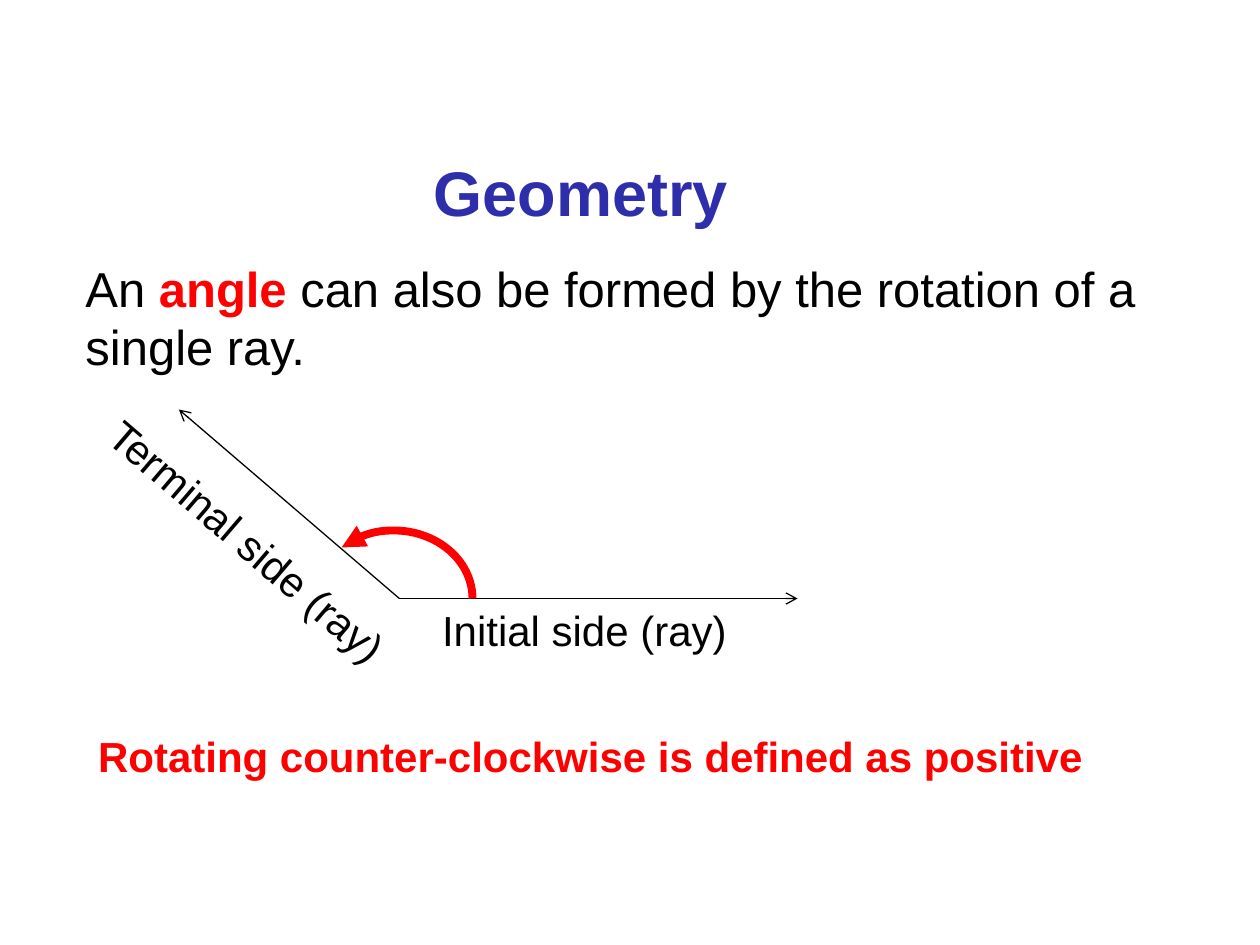
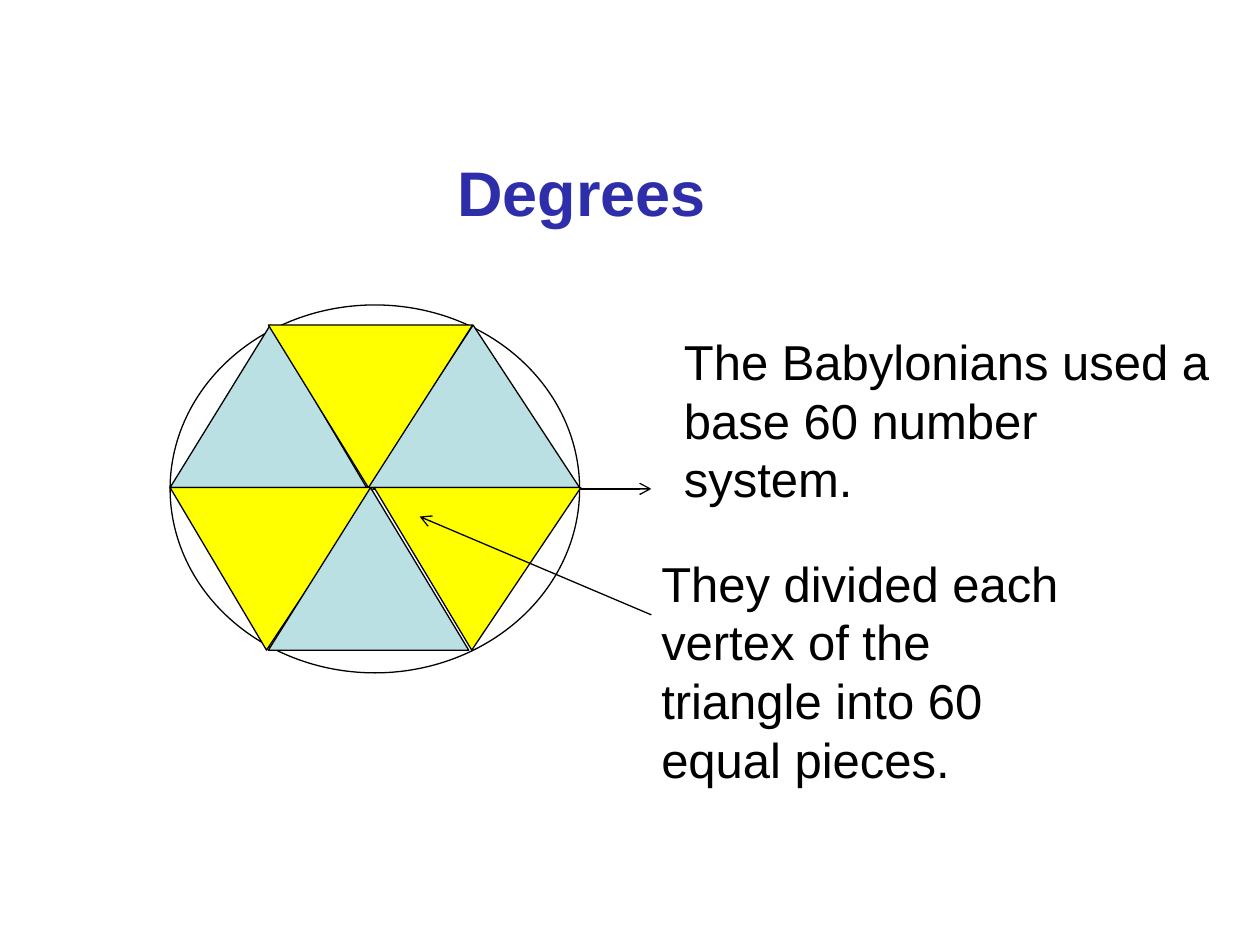
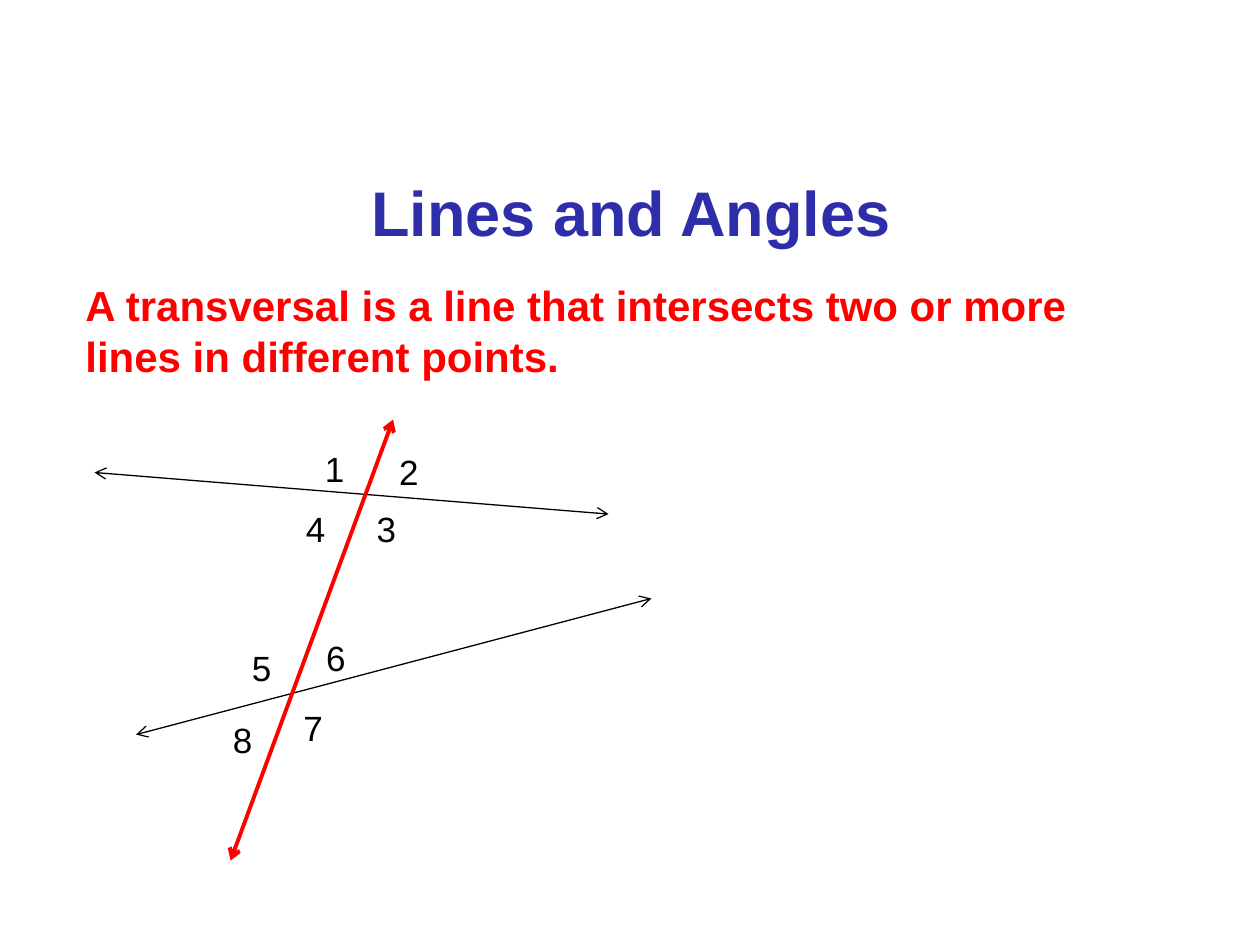
import pptx
import pptx.dml.color
import pptx.enum.shapes
import pptx.enum.text
import pptx.oxml
import pptx.oxml.ns
import pptx.util

Inches = pptx.util.Inches
Pt = pptx.util.Pt
SHAPES = pptx.enum.shapes.MSO_SHAPE

FONT = "Arial"
BLACK, RED, TITLE_BLUE = "000000", "FF0000", "2E2EAA"
YELLOW, PALE_BLUE = "FFFF00", "BBE0E3"
THIN = 0.75

# Geometry
VERTEX = (3.17, 4.75)
INITIAL_END, TERMINAL_END = (6.33, 4.75), (1.42, 3.25)
ROTATION_ARC = (2.5, 4.21, 1.25, 1.08)
ARC_START, ARC_END = 224.4, 0

# Degrees: left, width, apex position, points down, fill
ROW_TOPS, TRIANGLE_HEIGHT = (2.58, 3.87), 1.29
TRIANGLE_ROWS = [
    [(2.91, 1.69, 0.5, False, PALE_BLUE),
     (1.35, 1.56, 0.51, False, PALE_BLUE),
     (2.13, 1.62, 0.51, True, YELLOW)],
    [(1.35, 1.62, 0.528, True, YELLOW),
     (2.13, 1.59, 0.51, False, PALE_BLUE),
     (2.97, 1.64, 0.528, True, YELLOW)],
]

# Lines and Angles: places of the angle numbers, counted from 1
CROSSED_LINES = [((1.08, 5.83), (5.17, 4.75)), ((0.75, 3.75), (4.83, 4.08))]
TRANSVERSAL = ((3.12, 3.33), (1.83, 6.83))
ANGLE_PLACES = [
    (2.48, 3.5), (3.07, 3.53), (2.89, 3.98), (2.33, 3.98),
    (1.9, 5.08), (2.49, 5), (2.31, 5.56), (1.75, 5.65),
]


def color(value):
    return pptx.dml.color.RGBColor.from_string(value)


def add_text(slide, box, parts, size, wrap=False, rotation=0, centred=False):
    """Add a text box; parts are (text, colour, bold) runs of one paragraph."""
    shape = slide.shapes.add_textbox(*map(Inches, box))
    shape.rotation = rotation
    text_frame = shape.text_frame
    text_frame.word_wrap = wrap
    text_frame.auto_size = pptx.enum.text.MSO_AUTO_SIZE.SHAPE_TO_FIT_TEXT
    paragraph = text_frame.paragraphs[0]
    if centred:
        paragraph.alignment = pptx.enum.text.PP_ALIGN.CENTER
    for text, text_color, bold in parts:
        run = paragraph.add_run()
        run.text = text
        run.font.name = FONT
        run.font.size = Pt(size)
        run.font.bold = bold
        run.font.color.rgb = color(text_color)


def add_title(slide, text, left, top, width):
    add_text(slide, (left, top, width, 0.71), [(text, TITLE_BLUE, True)], 36, centred=True)


def add_arrowhead(line, end, kind):
    properties = line._get_or_add_ln()
    head = pptx.oxml.parse_xml(f'<a:{end} {pptx.oxml.ns.nsdecls("a")} type="{kind}"/>')
    properties.append(head)


def add_arrow(slide, start, end, line_color=BLACK, width=THIN, both_ends=False):
    connector = slide.shapes.add_connector(
        pptx.enum.shapes.MSO_CONNECTOR.STRAIGHT, *map(Inches, start + end))
    connector.line.color.rgb = color(line_color)
    connector.line.width = Pt(width)
    if both_ends:
        add_arrowhead(connector.line, "headEnd", "arrow")
    add_arrowhead(connector.line, "tailEnd", "arrow")
    connector._element.spPr.append(
        pptx.oxml.parse_xml(f'<a:effectLst {pptx.oxml.ns.nsdecls("a")}/>'))


def add_shape(slide, kind, box, fill=None, line_color=BLACK, width=THIN):
    shape = slide.shapes.add_shape(kind, *map(Inches, box))
    shape.shadow.inherit = False
    if fill:
        shape.fill.solid()
        shape.fill.fore_color.rgb = color(fill)
    else:
        shape.fill.background()
    shape.line.color.rgb = color(line_color)
    shape.line.width = Pt(width)
    return shape


def build_geometry(slide):
    add_title(slide, "Geometry", 3.33, 1.17, 2.56)
    add_text(slide, (0.58, 2, 8.75, 1.04), [
        ("An ", BLACK, False),
        ("angle", RED, True),
        (" can also be formed by the rotation of a single ray.", BLACK, False),
    ], 28, wrap=True)
    add_arrow(slide, VERTEX, INITIAL_END)
    arc = add_shape(slide, SHAPES.ARC, ROTATION_ARC, line_color=RED, width=4.5)
    for index, degrees in enumerate((ARC_START, ARC_END)):
        arc.adjustments[index] = degrees * 0.6  # 60000 units a degree, scaled by 100000
    add_arrowhead(arc.line, "headEnd", "triangle")
    add_arrow(slide, VERTEX, TERMINAL_END)
    add_text(slide, (3.41, 4.75, 2.49, 0.5), [("Initial side (ray)", BLACK, False)], 24)
    add_text(slide, (0.49, 4.05, 2.97, 0.5), [("Terminal side (ray)", BLACK, False)], 24,
             rotation=40.5)
    add_text(slide, (0.68, 5.75, 8.09, 0.5),
             [("Rotating counter-clockwise is defined as positive", RED, True)], 24)


def build_degrees(slide):
    add_shape(slide, SHAPES.OVAL, (1.35, 2.42, 3.25, 2.92))
    add_arrow(slide, (2.97, 3.88), (5.17, 3.88))
    for top, row in zip(ROW_TOPS, TRIANGLE_ROWS):
        for left, width, apex, points_down, fill in row:
            triangle = add_shape(slide, SHAPES.ISOSCELES_TRIANGLE,
                                 (left, top, width, TRIANGLE_HEIGHT), fill)
            triangle.adjustments[0] = apex
            triangle.rotation = 180 if points_down else 0
    add_arrow(slide, (5.17, 4.88), (3.33, 4.1))
    add_text(slide, (5.33, 2.58, 4.42, 1.51),
             [("The Babylonians used a base 60 number system.", BLACK, False)], 28, wrap=True)
    add_text(slide, (5.15, 4.34, 3.67, 1.99),
             [("They divided each vertex of the triangle into 60 equal pieces.", BLACK, False)],
             28, wrap=True)
    add_title(slide, "Degrees", 3.52, 1.17, 2.19)


def build_lines_and_angles(slide):
    add_title(slide, "Lines and Angles", 2.83, 1.33, 4.36)
    for start, end in CROSSED_LINES:
        add_arrow(slide, start, end, both_ends=True)
    add_arrow(slide, *TRANSVERSAL, RED, 2.25, both_ends=True)
    add_text(slide, (0.58, 2.17, 8.83, 0.91), [
        ("A transversal is a line that intersects two or more lines in different points.",
         RED, True),
    ], 24, wrap=True)
    for number, (left, top) in enumerate(ANGLE_PLACES, start=1):
        add_text(slide, (left, top, 0.36, 0.44), [(str(number), BLACK, False)], 20)


def main():
    presentation = pptx.Presentation()
    presentation.slide_width = Inches(10)
    presentation.slide_height = Inches(7.5)
    blank_layout = presentation.slide_layouts[6]
    for build in (build_geometry, build_degrees, build_lines_and_angles):
        build(presentation.slides.add_slide(blank_layout))
    presentation.save("out.pptx")


if __name__ == "__main__":
    main()
